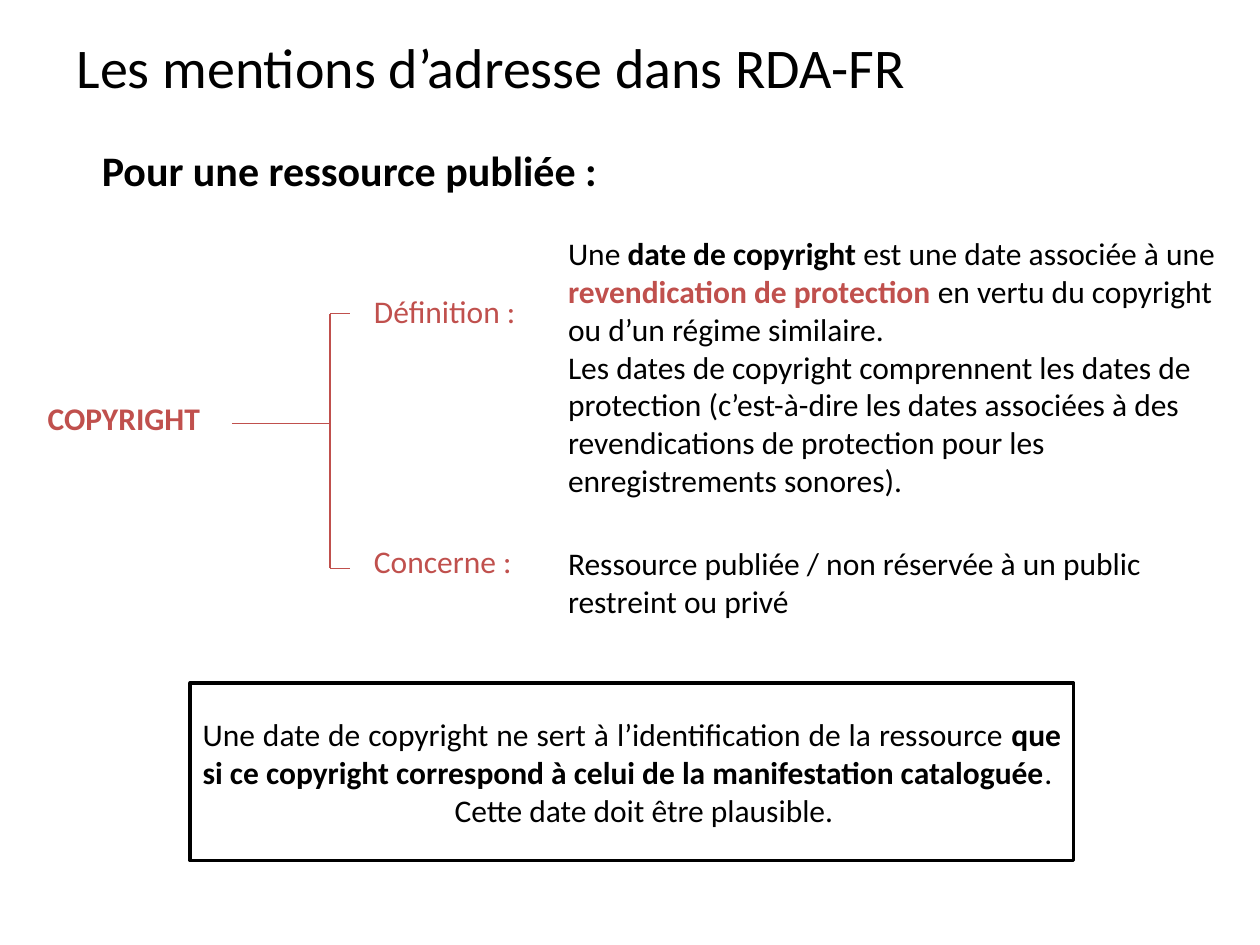
from dataclasses import dataclass
from pptx import Presentation
from pptx.util import Inches, Pt
from pptx.dml.color import RGBColor as RGB
from pptx.enum.shapes import MSO_CONNECTOR as Conn, MSO_SHAPE as Kind
from pptx.enum.text import MSO_ANCHOR as Anchor, PP_ALIGN as Align
from lxml.etree import SubElement
from pptx.oxml.ns import qn


@dataclass(frozen=True)
class Theme:
    font: str = "Calibri"
    black: RGB = RGB(0, 0, 0)
    white: RGB = RGB(255, 255, 255)
    red: RGB = RGB(0xC0, 0x50, 0x4D)
    title: int = 32
    head: int = 24
    body: int = 18


theme = Theme()


def write(shape, *paras, size=theme.body, color=theme.black, bold=False,
          align=Align.LEFT, anchor=Anchor.TOP, wrap=True):
    """Each paragraph is a list of runs: plain text or (text, color) in bold."""
    frame = shape.text_frame
    frame.word_wrap = wrap
    frame.vertical_anchor = anchor
    for i, runs in enumerate(paras):
        para = frame.paragraphs[0] if i == 0 else frame.add_paragraph()
        para.alignment = align
        for item in runs:
            text, tint, strong = (item, color, bold) if isinstance(item, str) else (*item, True)
            run = para.add_run()
            run.text = text
            run.font.name = theme.font
            run.font.size = Pt(size)
            run.font.bold = strong
            run.font.color.rgb = tint
    return frame


deck = Presentation()
deck.slide_width, deck.slide_height = Inches(10), Inches(7.5)
slide = deck.slides.add_slide(deck.slide_layouts[6])
shapes = slide.shapes


def box(x, y, w, h):
    return shapes.add_textbox(Inches(x), Inches(y), Inches(w), Inches(h))


# Title and heading
write(box(0.51, 0.21, 9, 5.83), ["Les mentions d’adresse dans RDA-FR"], size=theme.title)
write(box(0.71, 1.1, 4.24, 0.5), ["Pour une ressource publiée :"],
      size=theme.head, bold=True, wrap=False)

# Topic and its two branches
write(box(0.28, 3.12, 1.81, 0.4), ["COPYRIGHT"], color=theme.red, bold=True)
for label, y, w in (("Définition :", 2.27, 1.46), ("Concerne :", 4.25, 1.37)):
    write(box(2.87, y, w, 0.4), [label], color=theme.red)

# Branch texts
write(box(4.41, 1.81, 5.39, 2.22),
      ["Une ", ("date de copyright ", theme.black), "est une date associée à une ",
       ("revendication de protection ", theme.red),
       "en vertu du copyright ou d’un régime similaire."],
      ["Les dates de copyright comprennent les dates de protection (c’est-à-dire "
       "les dates associées à des revendications de protection pour les "
       "enregistrements sonores)."])
write(box(4.41, 4.27, 5.59, 0.71),
      ["Ressource publiée / non réservée à un public restreint ou privé"])

# Bracket
left, stem, right = 1.84, 2.62, 2.78
top, mid, low = 2.49, 3.36, 4.51
for x1, y1, x2, y2 in ((left, mid, stem, mid), (stem, low, stem, top),
                       (stem, top, right, top), (stem, low, right, low)):
    line = shapes.add_connector(Conn.STRAIGHT, Inches(x1), Inches(y1), Inches(x2), Inches(y2))
    line.line.color.rgb = theme.red
    line.line.width = Pt(0.75)
    SubElement(line._element.spPr, qn("a:effectLst"))

# Framed note
note = shapes.add_shape(Kind.RECTANGLE, Inches(1.51), Inches(5.42), Inches(7.01), Inches(1.41))
note.shadow.inherit = False
note.fill.solid()
note.fill.fore_color.rgb = theme.white
note.line.color.rgb = theme.black
note.line.width = Pt(2)
frame = write(note,
              ["Une date de copyright ne sert à l’identification de la ressource ",
               ("que si ce copyright correspond à celui de la manifestation cataloguée",
                theme.black), ". "],
              ["Cette date doit être plausible."],
              align=Align.JUSTIFY, anchor=Anchor.MIDDLE)
frame.paragraphs[1]._p.get_or_add_pPr().set("marL", str(Inches(2)))

deck.save("out.pptx")
